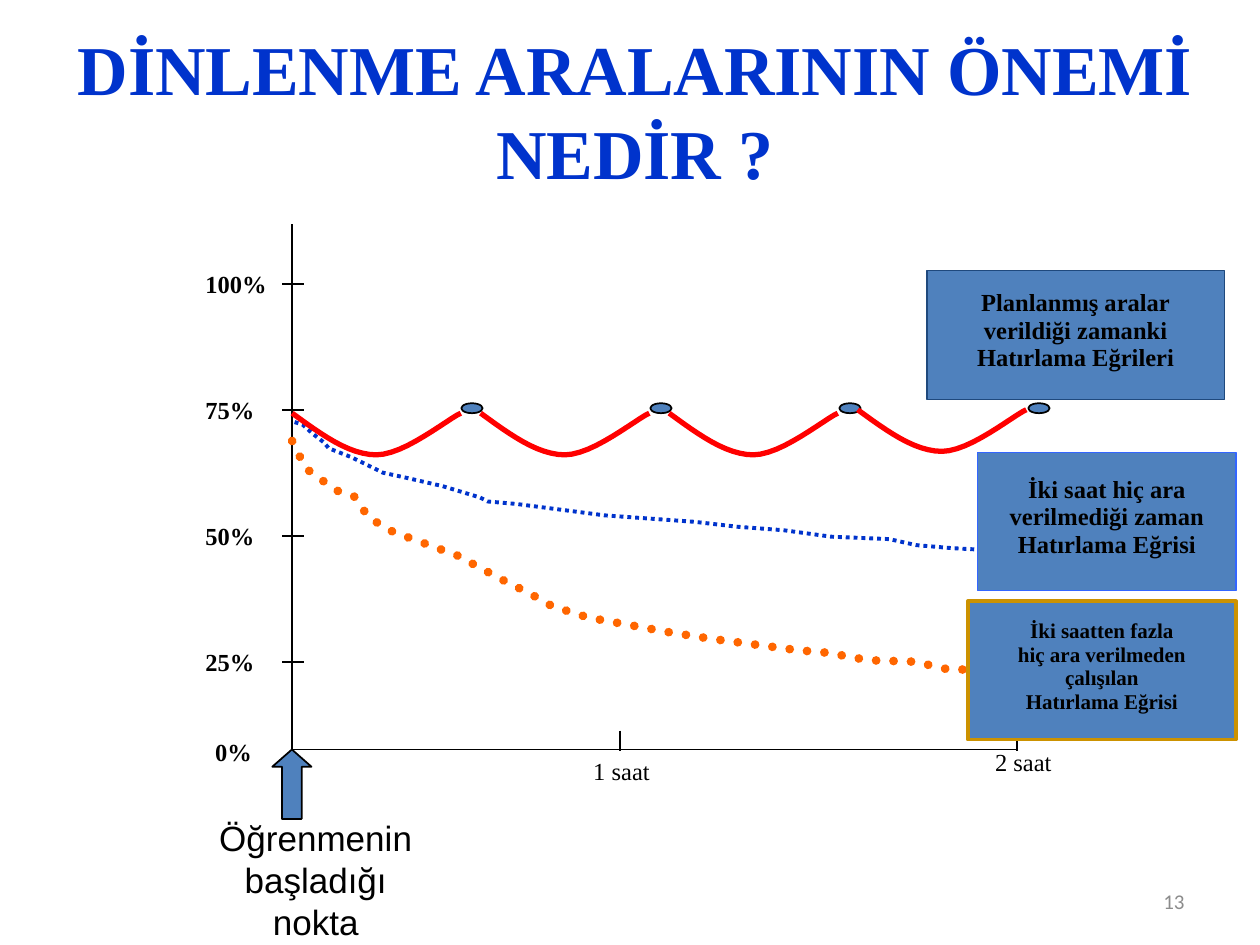
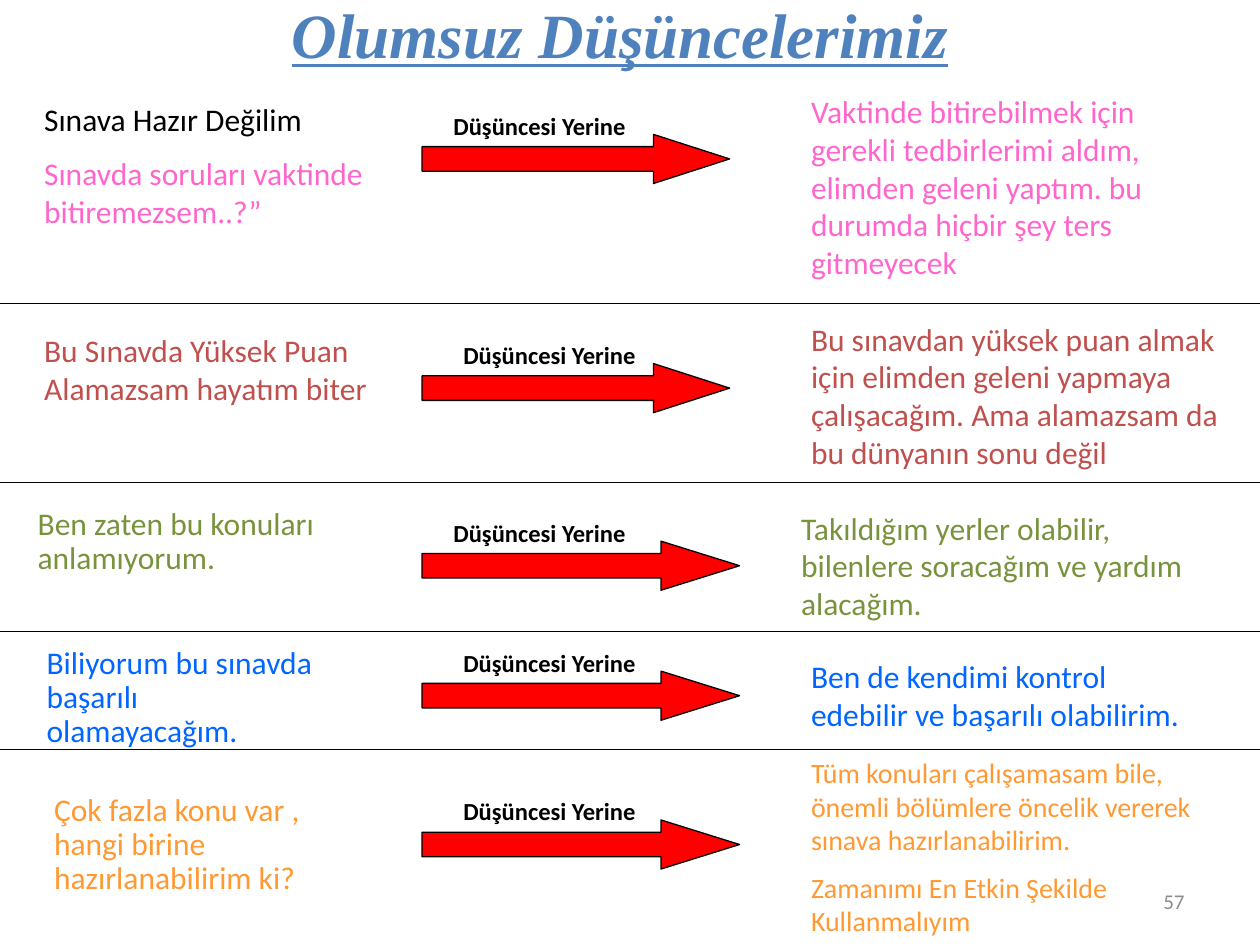
"""Build two slides on study breaks and on replacing negative thoughts."""
from dataclasses import dataclass

from lxml import etree
from pptx import Presentation
from pptx import util as u
from pptx.dml.color import RGBColor
from pptx.enum import dml, shapes, text
from pptx.oxml.ns import qn


@dataclass(frozen=True)
class Theme:
    black: str = "000000"
    blue: str = "4F81BD"
    title_blue: str = "0033CC"
    red: str = "FF0000"
    orange: str = "FF6600"
    grey: str = "8C8C8C"
    pink: str = "FF66CC"
    brick: str = "C0504D"
    green: str = "77933C"
    bright_blue: str = "0066FF"
    amber: str = "FF9933"
    serif: str = "Times New Roman"
    body: str = "Calibri"
    sans: str = "Arial"
    big_title: int = 40
    title: int = 36
    start: int = 20
    thought: int = 18
    answer: int = 16
    label: int = 14
    small: int = 12


theme = Theme()
LEFT, CENTER, RIGHT = text.PP_ALIGN.LEFT, text.PP_ALIGN.CENTER, text.PP_ALIGN.RIGHT
TOP, MIDDLE = text.MSO_ANCHOR.TOP, text.MSO_ANCHOR.MIDDLE
STRAIGHT = shapes.MSO_CONNECTOR.STRAIGHT


def write(lines, target, box=None, font=theme.body, size=theme.thought, color=theme.black,
          bold=False, italic=False, underline=False, align=LEFT, anchor=TOP,
          spacing=None, before=0, wrap=True):
    shape = target.shapes.add_textbox(*map(u.Cm, box)) if box else target
    frame = shape.text_frame
    frame.word_wrap = wrap
    frame.vertical_anchor = anchor
    frame.text = lines
    for paragraph in frame.paragraphs:
        paragraph.alignment = align
        paragraph.line_spacing = spacing
        paragraph.space_before = u.Pt(before)
        for run in paragraph.runs:
            run.font.name = font
            run.font.size = u.Pt(size)
            run.font.bold = bold
            run.font.italic = italic
            run.font.underline = underline
            run.font.color.rgb = RGBColor.from_string(color)
    return frame


def outline(shape, color=theme.black, width=1.0, fill=None):
    shape.line.color.rgb = RGBColor.from_string(color)
    shape.line.width = u.Pt(width)
    if fill:
        shape.fill.solid()
        shape.fill.fore_color.rgb = RGBColor.from_string(fill)
    etree.SubElement(shape.element.spPr, qn("a:effectLst"))


presentation = Presentation()
presentation.slide_width = u.Cm(25.4)
presentation.slide_height = u.Cm(19.05)
breaks, thoughts = [presentation.slides.add_slide(presentation.slide_layouts[6])
                    for _ in range(2)]

titles = [
    (breaks, "13", "DİNLENME ARALARININ ÖNEMİ NEDİR ?", (1.3, 0.71, 23.01, 3),
     dict(size=theme.big_title, color=theme.title_blue)),
    (thoughts, "57", "Olumsuz Düşüncelerimiz", (1.07, 0, 22.86, 1.35),
     dict(size=theme.title, color=theme.blue, italic=True, underline=True)),
]
for slide, number, title, box, look in titles:
    write(number, slide, (18.21, 17.65, 5.92, 1.02), size=theme.small, color=theme.grey,
          align=RIGHT, anchor=MIDDLE)
    write(title, slide, box, font=theme.serif, bold=True, align=CENTER, anchor=MIDDLE, **look)

axis_left, axis_top, axis_right, axis_bottom = 5.89, 4.52, 20.5, 15.11
percent_ticks = {f"{100 - 25 * step}%": 5.72 + 2.54 * step for step in range(4)}
hour_ticks = (12.5, axis_right)
axis_lines = [(axis_left, axis_top, axis_left, axis_bottom),
              (axis_left, axis_bottom, axis_right, axis_bottom)]
axis_lines += [(5.69, y, 6.12, y) for y in percent_ticks.values()]
axis_lines += [(x, 14.73, x, 15.14) for x in hour_ticks]
for ends in axis_lines:
    outline(breaks.shapes.add_connector(STRAIGHT, *map(u.Cm, ends)))

for label, y in percent_ticks.items():
    write(label, breaks, (3.89, y - 0.43, 2.08, 0.84), font=theme.serif,
          size=theme.label, bold=True)
write("0%", breaks, (4.09, 14.73, 1.8, 0.84), font=theme.serif, size=theme.label, bold=True)
for label, box in (("1 saat", (11.71, 15.11, 2.11, 0.84)),
                   ("2 saat", (19.81, 14.94, 1.7, 0.84))):
    write(label, breaks, box, font=theme.serif, size=theme.label)

start_arrow = breaks.shapes.add_shape(shapes.MSO_SHAPE.UP_ARROW,
                                      *map(u.Cm, (5.49, axis_bottom, 0.79, 1.4)))
start_arrow.adjustments[1] = 0.44
outline(start_arrow, fill=theme.blue)
write("Öğrenmenin başladığı nokta", breaks, (4.04, 16.33, 4.65, 2.82),
      font=theme.sans, size=theme.start, align=CENTER)

no_break = [(5.94, 8.51), (6.1, 8.56), (6.3, 8.74), (6.53, 8.92), (6.63, 9.04), (7.09, 9.22),
            (7.72, 9.53), (8.18, 9.63), (8.92, 9.8), (9.68, 10.03), (9.83, 10.11),
            (10.41, 10.16), (12.19, 10.39), (14, 10.52), (14.86, 10.62), (15.8, 10.69),
            (16.76, 10.82), (17.93, 10.87), (18.47, 10.99), (19.18, 11.05), (20.09, 11.1)]
over_two_hours = [(5.89, 8.89), (6.16, 9.44), (6.63, 9.78), (6.83, 9.91), (7.14, 10.01),
                  (7.44, 10.44), (7.92, 10.72), (9.22, 11.2), (10.11, 11.68), (10.67, 11.96),
                  (11.13, 12.22), (11.86, 12.45), (13.51, 12.75), (14.35, 12.88),
                  (16.1, 13.11), (16.69, 13.16), (17.5, 13.31), (18.44, 13.34),
                  (19.18, 13.51), (20.09, 13.46)]
dip_halves = [((0, 0), (0.58, 0.42), (1.14, 0.84), (1.7, 0.84)),
              ((1.7, 0.84), (2.26, 0.84), (3.12, 0.13), (3.4, 0))]
steps = [step / 12 for step in range(13)]
dip = [tuple((1 - t) ** 3 * a + 3 * t * (1 - t) ** 2 * b + 3 * t * t * (1 - t) * c + t ** 3 * d
             for a, b, c, d in zip(*half))
       for half in dip_halves for t in steps]

curves = [(no_break, theme.title_blue, 2.25, "flat"), (over_two_hours, theme.orange, 5, "rnd")]
for index, top in enumerate((8.33, 8.33, 8.33, 8.26)):
    left = axis_left + 3.8 * index
    curves.append(([(left + x, top + y) for x, y in dip], theme.red, 3, None))
    pause = breaks.shapes.add_shape(shapes.MSO_SHAPE.OVAL,
                                    *map(u.Cm, (9.3 + 3.81 * index, 8.13, 0.43, 0.2)))
    outline(pause, fill=theme.blue)

for points, color, width, dot_cap in curves:
    start, *rest = [(u.Cm(x), u.Cm(y)) for x, y in points]
    builder = breaks.shapes.build_freeform(*start)
    builder.add_line_segments(rest, close=False)
    curve = builder.convert_to_shape()
    curve.fill.background()
    outline(curve, color, width)
    if dot_cap:
        curve.line.dash_style = dml.MSO_LINE.ROUND_DOT
        curve.element.spPr.find(qn("a:ln")).set("cap", dot_cap)

legends = [
    ("Planlanmış aralar\nverildiği zamanki\nHatırlama Eğrileri",
     (18.69, 5.46, 5.99, 2.59), "1F497D", 0.75, theme.label),
    ("İki saat hiç ara\nverilmediği zaman\nHatırlama Eğrisi",
     (19.71, 9.12, 5.21, 2.79), "3366FF", 0.75, theme.label),
    ("İki saatten fazla\nhiç ara verilmeden\nçalışılan\nHatırlama Eğrisi",
     (19.51, 12.12, 5.41, 2.79), "CC9200", 2, theme.small),
]
for lines, box, border, width, size in legends:
    legend = breaks.shapes.add_shape(shapes.MSO_SHAPE.RECTANGLE, *map(u.Cm, box))
    outline(legend, border, width, theme.blue)
    write(lines, legend, font=theme.serif, size=size, bold=True, align=CENTER, anchor=MIDDLE,
          spacing=0.5, before=round(size * 0.52, 1), wrap=False)

rows = [
    (theme.pink, "Sınava Hazır Değilim\nSınavda soruları vaktinde bitiremezsem..?”",
     (0.64, 1.9, 7.42, 3.68), None,
     "Vaktinde bitirebilmek için gerekli tedbirlerimi aldım, elimden geleni yaptım. "
     "bu durumda hiçbir şey ters\ngitmeyecek",
     (16.1, 1.73, 8.46, 4.06), theme.thought, 8.89, 2.11, 6.2),
    (theme.brick, "Bu Sınavda Yüksek Puan Alamazsam hayatım biter",
     (0.64, 6.55, 7.42, 2.54), None,
     "Bu sınavdan yüksek puan almak için elimden geleni yapmaya çalışacağım. "
     "Ama alamazsam da bu dünyanın sonu değil",
     (16.1, 6.32, 8.89, 4.06), theme.thought, 9.09, 6.73, 6.2),
    (theme.green, "Ben zaten bu konuları anlamıyorum.",
     (0.51, 10.13, 6.15, 1.65), 0.9,
     "Takıldığım yerler olabilir, bilenlere soracağım ve yardım alacağım.",
     (15.9, 10.13, 9.09, 2.57), theme.thought, 8.89, 10.31, 6.4),
    (theme.bright_blue, "Biliyorum bu sınavda başarılı olamayacağım.",
     (0.69, 12.93, 6.15, 2.34), 0.9,
     "Ben de kendimi kontrol edebilir ve başarılı olabilirim.",
     (16.1, 13.13, 8.46, 1.8), theme.thought, 9.09, 12.93, 6.4),
    (theme.amber, "Çok fazla konu var , hangi birine hazırlanabilirim ki?",
     (0.84, 15.88, 6.35, 3.23), 0.9,
     "Tüm konuları çalışamasam bile, önemli bölümlere öncelik vererek "
     "sınava hazırlanabilirim.",
     (16.1, 15.11, 8.89, 2.31), theme.answer, 9.09, 15.93, 6.4),
]
for color, thought, thought_box, spacing, answer, answer_box, size, x, y, length in rows:
    frame = write(thought, thoughts, thought_box, color=color, spacing=spacing, before=9)
    if len(frame.paragraphs) > 1:
        frame.paragraphs[0].runs[0].font.color.rgb = RGBColor.from_string(theme.black)
    write(answer, thoughts, answer_box, size=size, color=color)
    write("Düşüncesi Yerine", thoughts, (x, y, 5.08, 0.84), size=theme.label, bold=True)
    arrow = thoughts.shapes.add_shape(shapes.MSO_SHAPE.RIGHT_ARROW,
                                      *map(u.Cm, (8.51, y + 0.6, length, 0.99)))
    arrow.adjustments[1] = length / 4
    outline(arrow, width=0.75, fill=theme.red)
write("Zamanımı En Etkin Şekilde Kullanmalıyım", thoughts, (16.1, 17.42, 8.46, 1.63),
      size=theme.answer, color=theme.amber)

for y in (6.12, 9.73, 12.73, 15.11):
    outline(thoughts.shapes.add_connector(STRAIGHT, *map(u.Cm, (0, y, 25.4, y))), width=0.75)

presentation.save("out.pptx")
